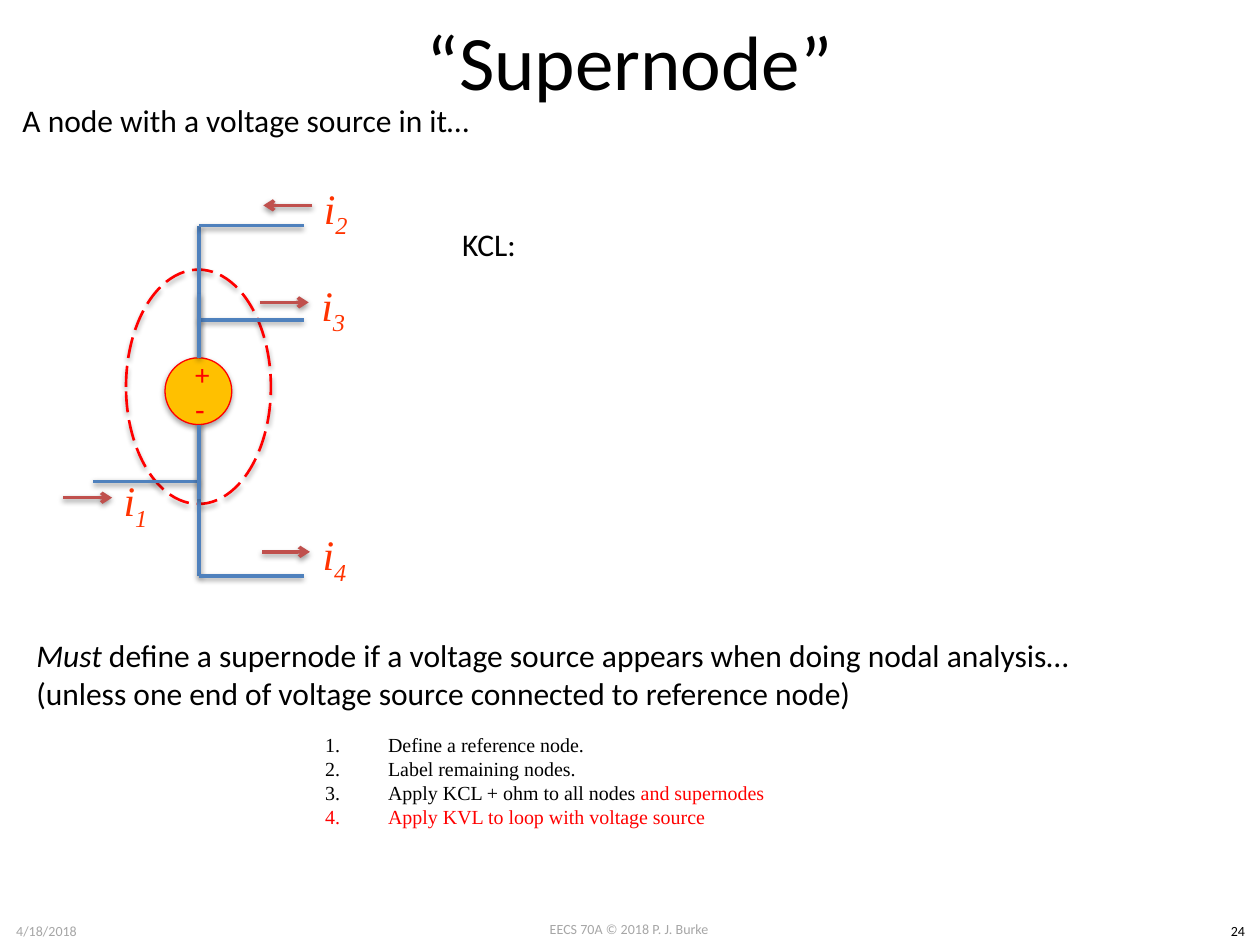
from dataclasses import dataclass

from lxml import etree
from pptx import Presentation
from pptx.dml.color import RGBColor
from pptx.enum.dml import MSO_LINE
from pptx.enum.shapes import MSO_CONNECTOR, MSO_SHAPE
from pptx.enum.text import MSO_ANCHOR, MSO_AUTO_SIZE, PP_ALIGN
from pptx.oxml import parse_xml
from pptx.oxml.ns import nsdecls, qn
from pptx.util import Pt

OVAL = MSO_SHAPE.OVAL
STRAIGHT = MSO_CONNECTOR.STRAIGHT
LONG_DASH = MSO_LINE.LONG_DASH
TOP, MIDDLE = MSO_ANCHOR.TOP, MSO_ANCHOR.MIDDLE
LEFT, CENTER = PP_ALIGN.LEFT, PP_ALIGN.CENTER
NO_FIT = MSO_AUTO_SIZE.NONE

PX = 9144  # 100 px to the inch


@dataclass(frozen=True)
class Theme:
    sans: str = "Calibri"
    serif: str = "Times New Roman"
    black: str = "000000"
    grey: str = "A6A6A6"
    red: str = "FF0000"
    label: str = "FF3300"
    wire: str = "4F81BD"
    arrow: str = "C0504D"
    source: str = "FFC000"
    title_size: float = 44
    label_size: float = 24
    text_size: float = 18
    plus_size: float = 16.6
    list_size: float = 11.4
    footer_size: float = 8


T = Theme()


def px(*lengths):
    return [round(n * PX) for n in lengths]


def rgb(value):
    return RGBColor.from_string(value)


def style_runs(p, size, color, font=T.sans, italic=False):
    for r in p.runs:
        r.font.name, r.font.size = font, Pt(size)
        r.font.color.rgb = rgb(color)
        r.font.italic = italic


def add_text(shapes, box, text, size, color=T.black, align=LEFT, anchor=TOP,
             wrap=True, font=T.sans, italic=False):
    tf = shapes.add_textbox(*px(*box)).text_frame
    tf.word_wrap, tf.vertical_anchor = wrap, anchor
    tf.text = text
    for p in tf.paragraphs:
        p.alignment = align
        style_runs(p, size, color, font, italic)
    return tf


def add_shadow(sp, alpha, dist):
    sp._element.spPr.append(parse_xml(
        f'<a:effectLst {nsdecls("a")}><a:outerShdw blurRad="{Pt(3.1)}" '
        f'dist="{Pt(dist)}" dir="5400000" rotWithShape="0">'
        f'<a:srgbClr val="000000"><a:alpha val="{alpha * 1000}"/></a:srgbClr>'
        '</a:outerShdw></a:effectLst>'))


def add_line(shapes, x1, y1, x2, y2, color=T.wire, arrow=False):
    line = shapes.add_connector(STRAIGHT, *px(x1, y1, x2, y2))
    line.line.color.rgb = rgb(color)
    line.line.width = Pt(2)
    if arrow:
        etree.SubElement(line.line._get_or_add_ln(), qn("a:tailEnd"), type="arrow")
    add_shadow(line, 38, 1.6)


def add_ellipse(shapes, box, width, fill=None, dash=None):
    sp = shapes.add_shape(OVAL, *px(*box))
    if fill:
        sp.fill.solid()
        sp.fill.fore_color.rgb = rgb(fill)
    else:
        sp.fill.background()
    sp.line.color.rgb = rgb(T.red)
    sp.line.width = Pt(width)
    if dash:
        sp.line.dash_style = dash
    add_shadow(sp, 35, 1.8)


def add_current(shapes, number, start, end, y, label_x):
    """Arrow for one branch current with its subscripted label."""
    add_line(shapes, start, y, end, y, T.arrow, arrow=True)
    tf = add_text(shapes, (label_x, y - 26, 77, 61), "i", T.label_size, T.label,
                  CENTER, MIDDLE, font=T.serif, italic=True)
    p = tf.paragraphs[0]
    r = p.add_run()
    r.text = number
    style_runs(p, T.label_size, T.label, T.serif, True)
    r.font._element.set("baseline", "-25000")


def add_voltage_source(shapes):
    group = shapes.add_group_shape().shapes
    add_ellipse(group, (131, 284, 53, 53), 0.75, fill=T.source)
    for sign, y, size in (("+", 280, T.plus_size), ("-", 308, T.text_size)):
        add_text(group, (145, y, 26, 33), sign, size, T.red, CENTER, MIDDLE)
    add_line(group, 158, 396, 158, 337)
    add_line(group, 158, 284, 158, 233)


def add_circuit(shapes):
    add_ellipse(shapes, (100, 214, 115, 186), 1.5, dash=LONG_DASH)
    add_line(shapes, 158, 457, 158, 179)
    for x1, x2, y in ((158, 241, 179), (158, 241, 254), (74, 158, 382), (158, 241, 457)):
        add_line(shapes, x1, y, x2, y)
    for current in (("2", 248, 209, 163, 228), ("3", 206, 245, 240, 226),
                    ("1", 50, 89, 395, 69), ("4", 208, 246, 438, 227)):
        add_current(shapes, *current)
    add_voltage_source(shapes)


def place(sp, box):
    sp.left, sp.top, sp.width, sp.height = px(*box)
    tf = sp.text_frame
    tf.auto_size, tf.vertical_anchor, tf.word_wrap = NO_FIT, MIDDLE, True
    return tf


def fill_title(sp):
    tf = place(sp, (50, 0, 900, 95))
    tf.text = "“Supernode”"
    tf.paragraphs[0].alignment = CENTER
    style_runs(tf.paragraphs[0], T.title_size, T.black)


def fill_steps(sp):
    tf = place(sp, (248, 583, 369, 73))
    tf.text = "\n".join((
        "Define a reference node.",
        "Label remaining nodes.",
        "Apply KCL + ohm to all nodes ",
        "Apply KVL to loop with voltage source",
    ))
    tf.paragraphs[2].add_run().text = "and supernodes"
    for p in tf.paragraphs:
        p.space_before = Pt(0)
        style_runs(p, T.list_size, T.black, T.serif)
        pPr = p._p.get_or_add_pPr()
        indent = px(50)[0]
        pPr.set("marL", str(indent))
        pPr.set("indent", str(-indent))
        etree.SubElement(pPr, qn("a:buFont"), typeface=T.serif)
        etree.SubElement(pPr, qn("a:buAutoNum"), type="arabicPeriod")
    for p in tf.paragraphs[2:]:
        p.runs[-1].font.color.rgb = rgb(T.red)


def add_remarks(shapes):
    add_text(shapes, (8, 75, 381, 40), "A node with a voltage source in it…",
             T.text_size, wrap=False)
    add_text(shapes, (357, 174, 63, 40), "KCL:", T.text_size, wrap=False)
    tf = add_text(shapes, (19, 500, 850, 71),
                  "Must\n(unless one end of voltage source connected to reference node)",
                  T.text_size, wrap=False)
    p = tf.paragraphs[0]
    p.add_run().text = " define a supernode if a voltage source appears when doing nodal analysis…"
    style_runs(p, T.text_size, T.black)
    p.runs[0].font.italic = True


def add_footer(shapes):
    for box, text, color in (((383, 726, 233, 24), "EECS 70A © 2018 P. J. Burke", T.grey),
                             ((0, 727, 74, 24), "4/18/2018", T.grey),
                             ((965, 727, 35, 24), "24", T.black)):
        add_text(shapes, box, text, T.footer_size, color, CENTER)


def main():
    prs = Presentation()
    prs.slide_width, prs.slide_height = px(1000, 750)
    s = prs.slides.add_slide(prs.slide_layouts[1])
    fill_title(s.shapes.title)
    fill_steps(s.placeholders[1])
    add_footer(s.shapes)
    add_circuit(s.shapes)
    add_remarks(s.shapes)
    prs.save("out.pptx")


if __name__ == "__main__":
    main()
